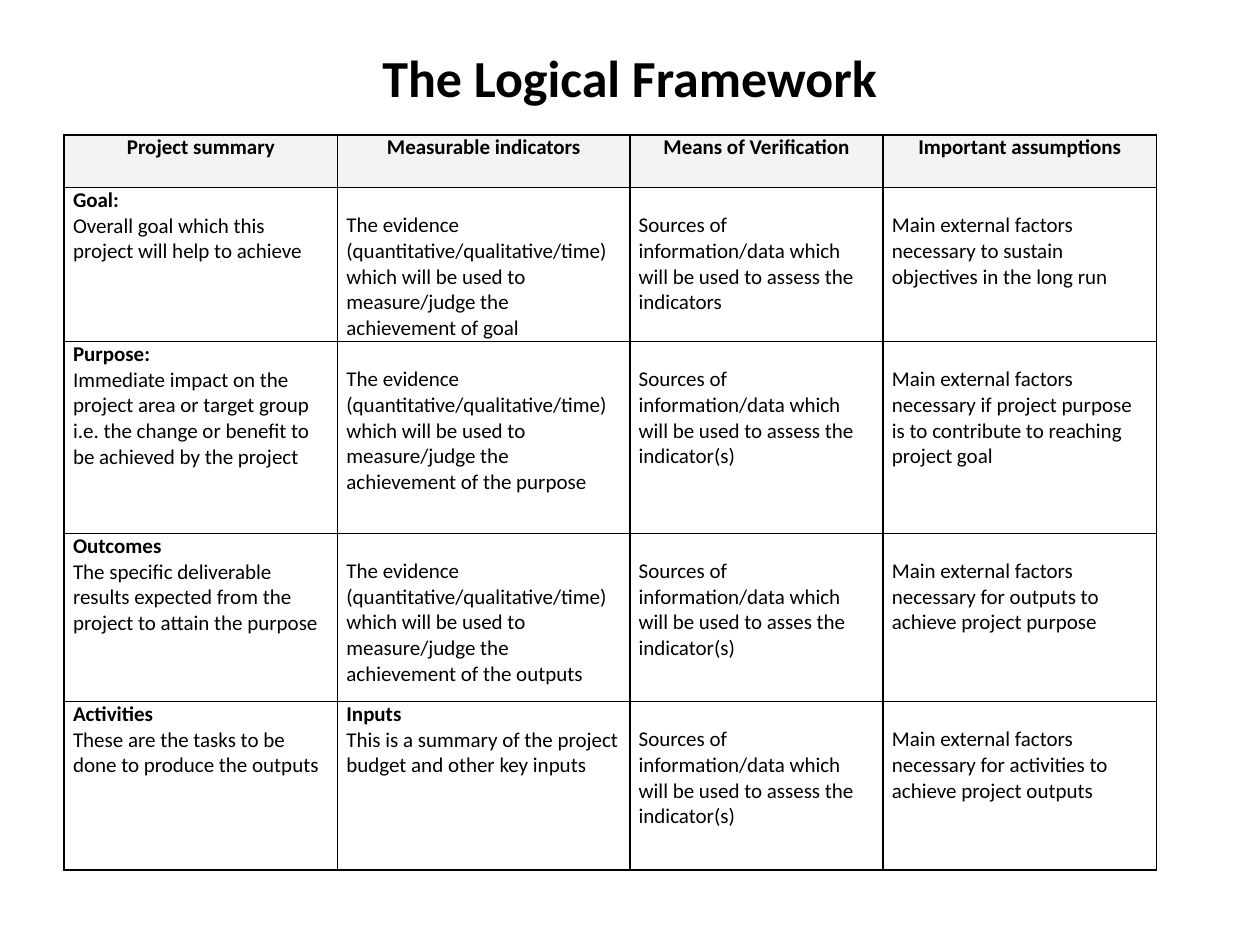
from lxml import etree
from pptx import Presentation
from pptx import util as u
from pptx.dml.color import RGBColor
from pptx.enum import text
from pptx.oxml import ns

BLACK = RGBColor(0x00, 0x00, 0x00)
WHITE = RGBColor(0xFF, 0xFF, 0xFF)
GREY = RGBColor(0xF3, 0xF3, 0xF3)

COLS = [21.7, 23.2, 20.1, 21.7]
ROWS = [5.6, 16.3, 20.3, 17.8, 17.8]
HEADS = ["Project summary", "Measurable indicators", "Means of Verification",
         "Important assumptions"]
PROOF = "The evidence (quantitative/qualitative/time) which will be used to measure/judge the achievement of "
DATA = "Sources of information/data which will be used to "
FACTS = "Main external factors necessary "
BODY = [
    ["Goal:\nOverall goal which this project will help to achieve",
     PROOF + "goal",
     DATA + "assess the indicators",
     FACTS + "to sustain objectives in the long run"],
    ["Purpose:\nImmediate impact on the project area or target group i.e. "
     "the change or benefit to be achieved by the project",
     PROOF + "the purpose",
     DATA + "assess the indicator(s)",
     FACTS + "if project purpose is to contribute to reaching project goal"],
    ["Outcomes\nThe specific deliverable results expected from the project "
     "to attain the purpose",
     PROOF + "the outputs",
     DATA + "asses the indicator(s)",
     FACTS + "for outputs to achieve project purpose"],
    ["Activities\nThese are the tasks to be done to produce the outputs",
     "Inputs\nThis is a summary of the project budget and other key inputs",
     DATA + "assess the indicator(s)",
     FACTS + "for activities to achieve project outputs"],
]


class Deck:
    font = "Calibri"
    size = 12
    line = 0.2
    pad = 0.07

    def __init__(self, wide, high):
        self.prs = Presentation()
        self.prs.slide_width = u.Inches(wide)
        self.prs.slide_height = u.Inches(high)
        self.slide = self.prs.slides.add_slide(self.prs.slide_layouts[6])

    def across(self, share):
        return round(self.prs.slide_width * share / 100)

    def down(self, share):
        return round(self.prs.slide_height * share / 100)

    def style(self, para, size, bold, align):
        para.alignment = align
        for run in para.runs:
            run.font.name = self.font
            run.font.size = u.Pt(size)
            run.font.bold = bold
            run.font.color.rgb = BLACK

    def title(self, words, left, top, wide, high, size):
        box = self.slide.shapes.add_textbox(
            self.across(left), self.down(top), self.across(wide), self.down(high))
        frame = box.text_frame
        frame.word_wrap = True
        frame.margin_top = frame.margin_bottom = 0
        frame.vertical_anchor = text.MSO_ANCHOR.MIDDLE
        frame.text = words
        self.style(frame.paragraphs[0], size, True, text.PP_ALIGN.CENTER)

    def border(self, cell):
        props = cell._tc.get_or_add_tcPr()
        for spot, side in enumerate(("lnL", "lnR", "lnT", "lnB")):
            edge = etree.Element(ns.qn("a:" + side), w=str(u.Pt(1)))
            fill = etree.SubElement(edge, ns.qn("a:solidFill"))
            etree.SubElement(fill, ns.qn("a:srgbClr"), val=str(BLACK))
            props.insert(spot, edge)

    def cell(self, cell, words, head):
        titled = "\n" in words
        cell.margin_left = cell.margin_right = u.Inches(self.pad)
        cell.margin_top = u.Inches(0 if head or titled else self.line)
        cell.margin_bottom = 0
        cell.fill.solid()
        cell.fill.fore_color.rgb = GREY if head else WHITE
        cell.text_frame.text = words
        align = text.PP_ALIGN.CENTER if head else text.PP_ALIGN.LEFT
        for spot, para in enumerate(cell.text_frame.paragraphs):
            self.style(para, self.size, head or (titled and spot == 0), align)
        self.border(cell)

    def table(self, data, cols, rows, left, top):
        grid = self.slide.shapes.add_table(
            len(rows), len(cols), self.across(left), self.down(top),
            self.across(sum(cols)), self.down(sum(rows))).table
        grid.first_row = grid.horz_banding = False
        for col, share in zip(grid.columns, cols):
            col.width = self.across(share)
        for row, share in zip(grid.rows, rows):
            row.height = self.down(share)
        for r, line in enumerate(data):
            for c, words in enumerate(line):
                self.cell(grid.cell(r, c), words, r == 0)

    def save(self):
        self.prs.save("out.pptx")


def main():
    deck = Deck(10, 7.5)
    deck.title("The Logical Framework", 7.5, 4.8, 85, 6.67, 29.7)
    deck.table([HEADS] + BODY, COLS, ROWS, 5.1, 14.27)
    deck.save()


if __name__ == "__main__":
    main()
